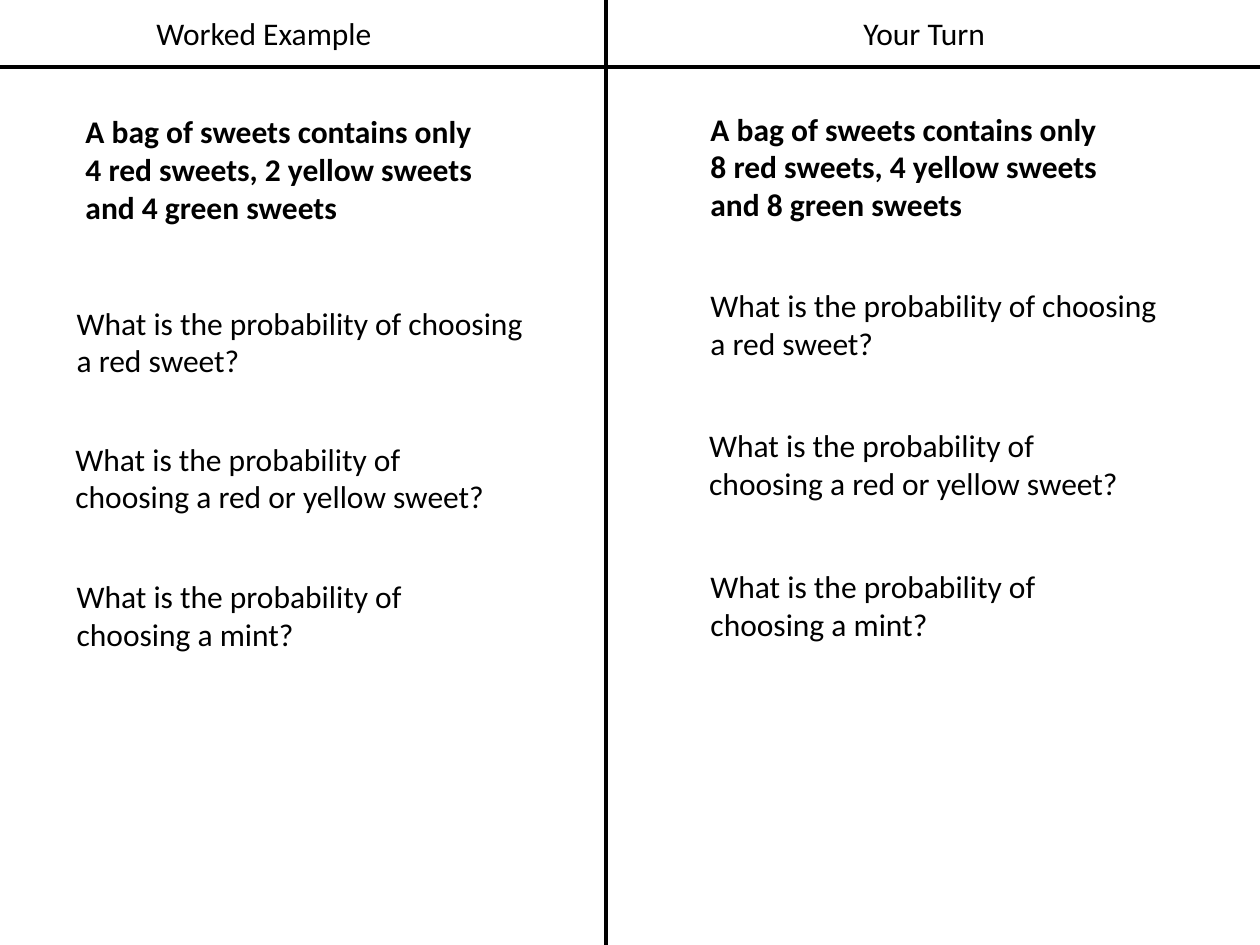
from lxml.etree import SubElement
from pptx import Presentation
from pptx.dml.color import RGBColor as Color
from pptx.enum.shapes import MSO_CONNECTOR as Connector
from pptx.enum.text import MSO_ANCHOR as Anchor, MSO_AUTO_SIZE as AutoSize, PP_ALIGN as Align
from pptx.oxml.ns import qn
from pptx.util import Inches, Pt

COLORS = {"ink": "000000", "paper": "FFFFFF"}
WIDTH, HEIGHT = 10, 7.5
COMPARISON_LAYOUT = 4
LEFT_HEADING, RIGHT_HEADING = 1, 3

QUESTIONS = [
    ("What is the probability of choosing a red sweet?", 3.86),
    ("What is the probability of choosing a red or yellow sweet?", 3.58),
    ("What is the probability of choosing a mint?", 3.58),
]
COLUMNS = [
    {
        "heading": ("Worked Example", LEFT_HEADING, 1.13),
        "bag": ("A bag of sweets contains only 4 red sweets, 2 yellow sweets and 4 green sweets", 0.58, 0.84),
        "places": [(0.51, 2.36), (0.5, 3.44), (0.51, 4.53)],
    },
    {
        "heading": ("Your Turn", RIGHT_HEADING, 6.37),
        "bag": ("A bag of sweets contains only 8 red sweets, 4 yellow sweets and 8 green sweets", 5.54, 0.82),
        "places": [(5.54, 2.22), (5.53, 3.33), (5.54, 4.45)],
    },
]


class SlideBuilder:
    font_name = "Calibri"
    font_size = Pt(18)
    line_width = Pt(2.5)

    def __init__(self, slide):
        self.slide = slide
        fill = slide.background.fill
        fill.solid()
        fill.fore_color.rgb = Color.from_string(COLORS["paper"])

    def fill_text(self, box, text, bold=False, align=Align.LEFT):
        frame = box.text_frame
        frame.text = text
        frame.word_wrap = True
        frame.auto_size = AutoSize.SHAPE_TO_FIT_TEXT
        frame.vertical_anchor = Anchor.TOP
        para = frame.paragraphs[0]
        para.alignment = align
        para.space_before = Pt(0)
        para.font.name = self.font_name
        para.font.size = self.font_size
        para.font.bold = bold
        para.font.color.rgb = Color.from_string(COLORS["ink"])

    def heading(self, text, index, left):
        box = next(p for p in self.slide.placeholders if p.placeholder_format.idx == index)
        box.left, box.top = Inches(left), Inches(0.06)
        box.width, box.height = Inches(1.93), Inches(0.4)
        self.fill_text(box, text, align=Align.CENTER)

    def text(self, text, left, top, width, height, bold=False):
        box = self.slide.shapes.add_textbox(Inches(left), Inches(top), Inches(width), Inches(height))
        self.fill_text(box, text, bold)

    def line(self, *ends):
        line = self.slide.shapes.add_connector(Connector.STRAIGHT, *map(Inches, ends))
        line.line.color.rgb = Color.from_string(COLORS["ink"])
        line.line.width = self.line_width
        SubElement(line._element.spPr, qn("a:effectLst"))

    def remove_empty_placeholders(self):
        for box in list(self.slide.placeholders):
            if not box.text_frame.text:
                box._element.getparent().remove(box._element)


def main():
    deck = Presentation()
    deck.slide_width, deck.slide_height = Inches(WIDTH), Inches(HEIGHT)
    page = SlideBuilder(deck.slides.add_slide(deck.slide_layouts[COMPARISON_LAYOUT]))

    for column in COLUMNS:
        page.heading(*column["heading"])
    page.remove_empty_placeholders()

    page.line(4.81, 0, 4.81, HEIGHT)
    page.line(0, 0.53, WIDTH, 0.53)

    for column in COLUMNS:
        page.text(*column["bag"], 3.35, 1.01, bold=True)
        for (question, width), (left, top) in zip(QUESTIONS, column["places"]):
            page.text(question, left, top, width, 0.71)

    deck.save("out.pptx")


if __name__ == "__main__":
    main()
